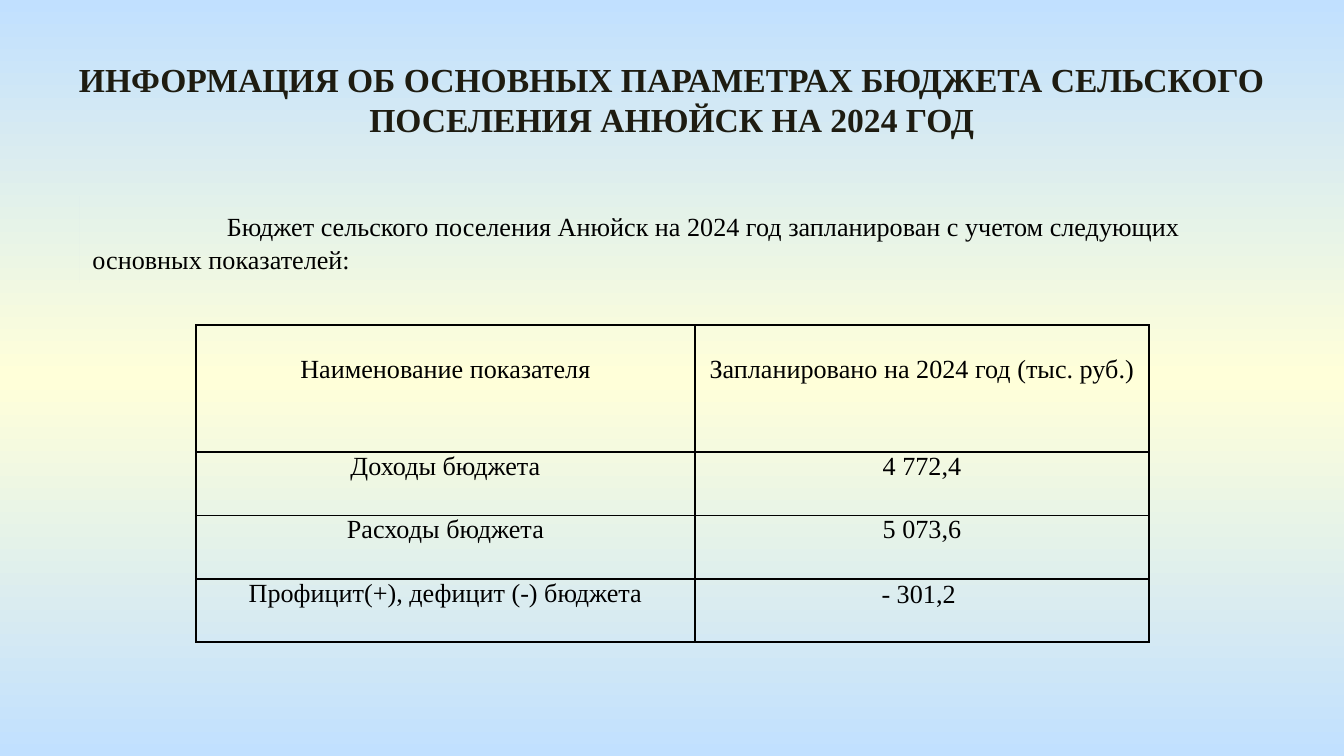
import pptx
import pptx.dml.color
import pptx.enum.shapes
import pptx.enum.text
import pptx.oxml
import pptx.oxml.ns
import pptx.util
from pptx.util import Inches

COLORS = {"sky": "C1E0FF", "cream": "FFFFD9", "title": "1E1C11", "ink": "000000"}
FONT = "Times New Roman"
CENTER = pptx.enum.text.PP_ALIGN.CENTER
LEFT = pptx.enum.text.PP_ALIGN.LEFT
ROWS = [
    ("Наименование показателя", "Запланировано на 2024 год (тыс. руб.)"),
    ("Доходы бюджета", "4 772,4"),
    ("Расходы бюджета", "5 073,6"),
    ("Профицит(+), дефицит (-) бюджета", "- 301,2 "),
]


def write(tf, text, size=14, color="ink", bold=False, align=CENTER):
    p = tf.paragraphs[0]
    p.alignment = align
    r = p.add_run()
    r.text = text
    r.font.name = FONT
    r.font.size = pptx.util.Pt(size)
    r.font.bold = bold
    r.font.color.rgb = pptx.dml.color.RGBColor.from_string(COLORS[color])
    return p


class SlideBuilder:
    def __init__(self, prs):
        self.s = prs.slides.add_slide(prs.slide_layouts[6])

    def background(self):
        """Fill the slide with a vertical sky-cream-sky gradient."""
        fill = self.s.background.fill
        fill.gradient()
        stops = "".join(
            f'<a:gs pos="{pos}"><a:srgbClr val="{COLORS[name]}"/></a:gs>'
            for pos, name in ((0, "sky"), (50000, "cream"), (100000, "sky"))
        )
        ns = pptx.oxml.ns.nsdecls("a")
        gs_list = pptx.oxml.parse_xml(f"<a:gsLst {ns}>{stops}</a:gsLst>")
        old = self.s.background._cSld.find(".//" + pptx.oxml.ns.qn("a:gsLst"))
        old.getparent().replace(old, gs_list)
        fill.gradient_angle = 270

    def text(self, box, text, **fmt):
        sp = self.s.shapes.add_textbox(*map(Inches, box))
        sp.text_frame.word_wrap = True
        write(sp.text_frame, text, **fmt)

    def panel(self, box, text, indent, line_pt, **fmt):
        """Add a rectangle that shows the slide background behind its text."""
        kind = pptx.enum.shapes.MSO_SHAPE.RECTANGLE
        sp = self.s.shapes.add_shape(kind, *map(Inches, box))
        sp._element.remove(sp._element.find(pptx.oxml.ns.qn("p:style")))
        sp._element.set("useBgFill", "1")
        sp.line.fill.background()
        sp.shadow.inherit = False
        tf = sp.text_frame
        tf.word_wrap = True
        tf.vertical_anchor = pptx.enum.text.MSO_ANCHOR.TOP
        tf.margin_top = Inches(0.09)
        p = write(tf, text, **fmt)
        p.line_spacing = pptx.util.Pt(line_pt)
        p._p.get_or_add_pPr().set("indent", str(Inches(indent)))

    def border(self, cell):
        """Draw a 1 pt line on all four sides and leave the cell unfilled."""
        cell.fill.background()
        props = cell._tc.get_or_add_tcPr()
        ns = pptx.oxml.ns.nsdecls("a")
        for i, side in enumerate(("lnL", "lnR", "lnT", "lnB")):
            props.insert(i, pptx.oxml.parse_xml(
                f'<a:{side} {ns} w="12700"><a:solidFill>'
                f'<a:srgbClr val="{COLORS["ink"]}"/></a:solidFill></a:{side}>'))

    def table(self, box, rows, widths, heights):
        shape = self.s.shapes.add_table(len(rows), len(widths), *map(Inches, box))
        table = shape.table
        table.first_row = table.horz_banding = False
        for col, width in zip(table.columns, widths):
            col.width = Inches(width)
        for i, (row, height) in enumerate(zip(rows, heights)):
            table.rows[i].height = Inches(height)
            for j, text in enumerate(row):
                cell = table.cell(i, j)
                cell.margin_left = cell.margin_right = Inches(0.07)
                cell.margin_top = Inches(0.22 if i == 0 else 0)
                cell.margin_bottom = 0
                write(cell.text_frame, text)
                self.border(cell)
        return table


def main():
    prs = pptx.Presentation()
    prs.slide_width = Inches(10)
    prs.slide_height = prs.slide_width * 9 // 16
    slide = SlideBuilder(prs)
    slide.background()

    slide.panel(
        (0.59, 1.46, 8.74, 0.64),
        "Бюджет сельского поселения Анюйск на 2024 год запланирован "
        "с учетом следующих основных показателей:",
        indent=1, line_pt=17.7, align=LEFT)

    slide.text(
        (0.35, 0.39, 9.3, 0.71),
        "ИНФОРМАЦИЯ ОБ ОСНОВНЫХ ПАРАМЕТРАХ БЮДЖЕТА СЕЛЬСКОГО "
        "ПОСЕЛЕНИЯ АНЮЙСК НА 2024 ГОД",
        size=18, color="title", bold=True)

    height = 2.36
    unit = height / (len(ROWS) + 1)  # the header is two units tall
    table = slide.table((1.46, 2.42, 7.09, height), ROWS, (3.71, 3.38),
                        [2 * unit] + [unit] * (len(ROWS) - 1))
    balance = table.cell(len(ROWS) - 1, 1)
    balance.margin_left = balance.margin_right = balance.margin_top = Inches(0.01)

    prs.save("out.pptx")


if __name__ == "__main__":
    main()
